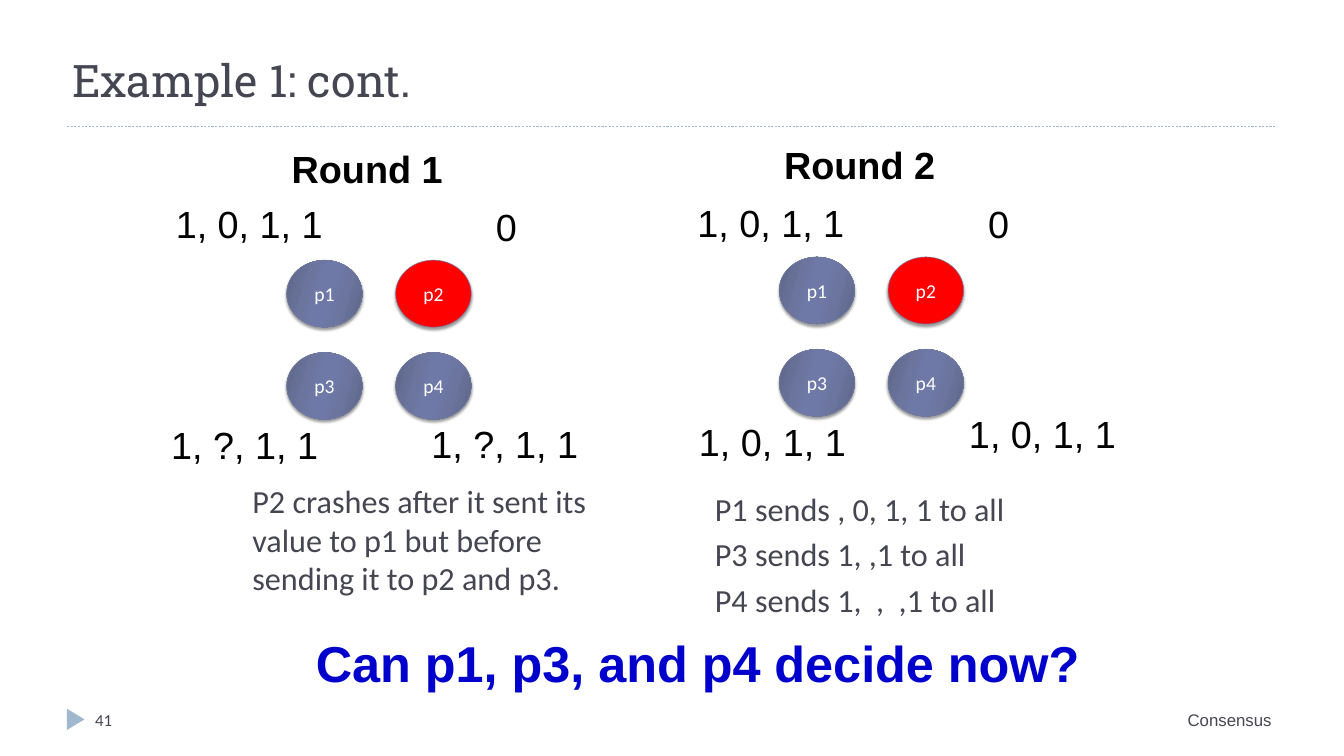
from dataclasses import dataclass

from lxml import etree
from pptx import Presentation
from pptx import util as u
from pptx.dml.color import RGBColor
from pptx.enum import dml, shapes, text
from pptx.oxml.ns import qn


@dataclass(frozen=True)
class Theme:
    ink: str = "464653"
    black: str = "000000"
    white: str = "FFFFFF"
    accent: str = "9FB8CD"
    outline: str = "727CA3"
    crashed: str = "FF0000"
    question: str = "0000CC"
    alive: tuple = ((0, "5D6585"), (30, "6B759E"), (45, "6E79A7"),
                    (55, "6E79A7"), (73, "6B759E"), (100, "5D6585"))
    heading_font: str = "Roboto Slab"
    body_font: str = "Calibri"
    label_font: str = "Arial"
    title_size: int = 64
    question_size: int = 72
    label_size: int = 54
    body_size: int = 46
    process_size: int = 28
    footer_size: int = 24


def box(left, top, width, height):
    return [u.Cm(value) for value in (left, top, width, height)]


def set_all(target, values):
    for name, value in values.items():
        setattr(target, name, value)


def add_xml(parent, tag, **attributes):
    return etree.SubElement(parent, qn(tag), {k: str(v) for k, v in attributes.items()})


class SlideBuilder:
    def __init__(self, slide, theme):
        self.slide, self.theme = slide, theme

    def fill_text(self, shape, lines, font, size, color, bold=False, indent=0, gap=0,
                  align=text.PP_ALIGN.LEFT):
        """Fill a shape with one paragraph per line; gap is the space between them."""
        frame = shape.text_frame
        frame.text = "\n".join(lines)
        for index, paragraph in enumerate(frame.paragraphs):
            if indent:
                properties = paragraph._p.get_or_add_pPr()
                properties.set("marL", str(u.Cm(indent)))
                properties.set("indent", "0")
            set_all(paragraph, {"alignment": align,
                                "space_before": u.Pt(gap if index else 0)})
            set_all(paragraph.font, {"name": font, "size": u.Pt(size), "bold": bold})
            paragraph.font.color.rgb = RGBColor.from_string(color)

    def title(self, line, place):
        shape = self.slide.shapes.title
        set_all(shape, dict(zip(("left", "top", "width", "height"), box(*place))))
        set_all(shape.text_frame, {"vertical_anchor": text.MSO_ANCHOR.BOTTOM,
                                   "auto_size": text.MSO_AUTO_SIZE.NONE})
        self.fill_text(shape, [line], self.theme.heading_font, self.theme.title_size,
                       self.theme.ink)

    def text_box(self, lines, place, font, size, color, wrap=True, inset=(0.25, 0.13),
                 **formats):
        shape = self.slide.shapes.add_textbox(*box(*place))
        side, edge = (u.Cm(value) for value in inset)
        set_all(shape.text_frame, {"word_wrap": wrap, "margin_left": side,
                                   "margin_right": side, "margin_top": edge,
                                   "margin_bottom": edge})
        self.fill_text(shape, lines, font, size, color, **formats)

    def label(self, line, left, top, width=8, bold=False):
        self.text_box([line], (left, top, width, 2.57), self.theme.label_font,
                      self.theme.label_size, self.theme.black, wrap=False, bold=bold)

    def explanation(self, lines, place, **formats):
        self.text_box(lines, place, self.theme.body_font, self.theme.body_size,
                      self.theme.ink, indent=1.52, **formats)

    def footer(self, line, place, font, **formats):
        self.text_box([line], place, font, self.theme.footer_size, self.theme.ink, **formats)

    def rule(self, left, right, top):
        line = self.slide.shapes.add_connector(
            shapes.MSO_CONNECTOR.STRAIGHT, *box(left, top, right, top))
        set_all(line.line, {"width": u.Pt(0.75), "dash_style": dml.MSO_LINE.DASH})
        line.line.color.rgb = RGBColor.from_string(self.theme.accent)
        add_xml(line._element.spPr, "a:effectLst")

    def marker(self, place):
        shape = self.slide.shapes.add_shape(
            shapes.MSO_SHAPE.ISOSCELES_TRIANGLE, *box(*place))
        shape.rotation = 90
        shape.shadow.inherit = False
        shape.fill.solid()
        shape.fill.fore_color.rgb = RGBColor.from_string(self.theme.accent)
        shape.line.fill.background()

    def process(self, name, left, top, crashed):
        shape = self.slide.shapes.add_shape(
            shapes.MSO_SHAPE.OVAL, *box(left, top, 3.81, 3.38))
        if crashed:
            shape.fill.solid()
            shape.fill.fore_color.rgb = RGBColor.from_string(self.theme.crashed)
        else:
            self.shade(shape)
        shape.line.width = u.Pt(0.75)
        shape.line.color.rgb = RGBColor.from_string(self.theme.outline)
        self.drop_shadow(shape)
        shape.text_frame.vertical_anchor = text.MSO_ANCHOR.MIDDLE
        self.fill_text(shape, [name], self.theme.body_font, self.theme.process_size,
                       self.theme.white, align=text.PP_ALIGN.CENTER)

    def shade(self, shape):
        """Give a shape the many-stop gradient of a live process."""
        shape.fill.gradient()
        gradient = shape._element.spPr.find(qn("a:gradFill"))
        stops = gradient.find(qn("a:gsLst"))
        for stop in list(stops):
            stops.remove(stop)
        for position, color in self.theme.alive:
            add_xml(add_xml(stops, "a:gs", pos=position * 1000), "a:srgbClr", val=color)
        gradient.find(qn("a:lin")).set("ang", str(16 * 60000))

    def drop_shadow(self, shape):
        shape.shadow.inherit = False
        effects = shape._element.spPr.find(qn("a:effectLst"))
        shadow = add_xml(effects, "a:outerShdw", blurRad=u.Pt(4), dist=u.Pt(3.4),
                         dir=90 * 60000, algn="ctr", rotWithShape=0)
        add_xml(add_xml(shadow, "a:srgbClr", val=self.theme.black), "a:alpha", val=40000)

    def round(self, heading, left, top, known_values):
        """Draw a 2 x 2 group of processes from its top-left corner, with its labels."""
        for index in range(4):
            row, column = divmod(index, 2)
            self.process(f"p{index + 1}", left + column * 5.49, top + row * 4.65,
                         crashed=index == 1)
        self.label(heading, left, top - 5.92, width=8.2, bold=True)
        self.label("0", left + 10.29, top - 2.98, width=1.57)
        for values, label_left, label_top in known_values:
            self.label(values, label_left, label_top)


def main():
    presentation = Presentation()
    set_all(presentation, {"slide_width": u.Cm(67.74), "slide_height": u.Cm(38.1)})
    theme = Theme()
    builder = SlideBuilder(presentation.slides.add_slide(presentation.slide_layouts[5]), theme)

    builder.rule(3.38, 64.34, 6.35)
    builder.marker((3.28, 35.81, 1.07, 0.89))
    builder.title("Example 1: cont.", (3.38, 0, 60.96, 5.51))
    builder.footer("Consensus", (38.38, 35.64, 25.96, 2.03), theme.label_font,
                   align=text.PP_ALIGN.RIGHT)
    builder.footer("41", (4.55, 35.64, 14.68, 2.03), theme.body_font)

    builder.round("Round 1", 14.45, 13.11, [
        ("1, 0, 1, 1", 8.61, 9.98),
        ("1, ?, 1, 1", 8.38, 21.11),
        ("1, ?, 1, 1", 21.49, 21.08)])
    builder.round("Round 2", 39.27, 12.95, [
        ("1, 0, 1, 1", 34.9, 9.96),
        ("1, 0, 1, 1", 34.98, 20.98),
        ("1, 0, 1, 1", 48.59, 20.57)])

    builder.explanation(
        ["P2 crashes after it sent its value to p1 but before sending it to p2 and p3."],
        (10.69, 24, 19.48, 7.37), inset=(0.51, 0.25))
    builder.explanation(
        ["P1 sends , 0, 1, 1 to all", "P3 sends 1, ,1 to all", "P4 sends 1,  ,  ,1 to all"],
        (34.26, 24.51, 30.2, 10.41), gap=10)
    builder.text_box(["Can p1, p3, and p4 decide now?"], (15.67, 31.75, 39.42, 3.33),
                     theme.label_font, theme.question_size, theme.question,
                     wrap=False, bold=True)
    presentation.save("out.pptx")


if __name__ == "__main__":
    main()
